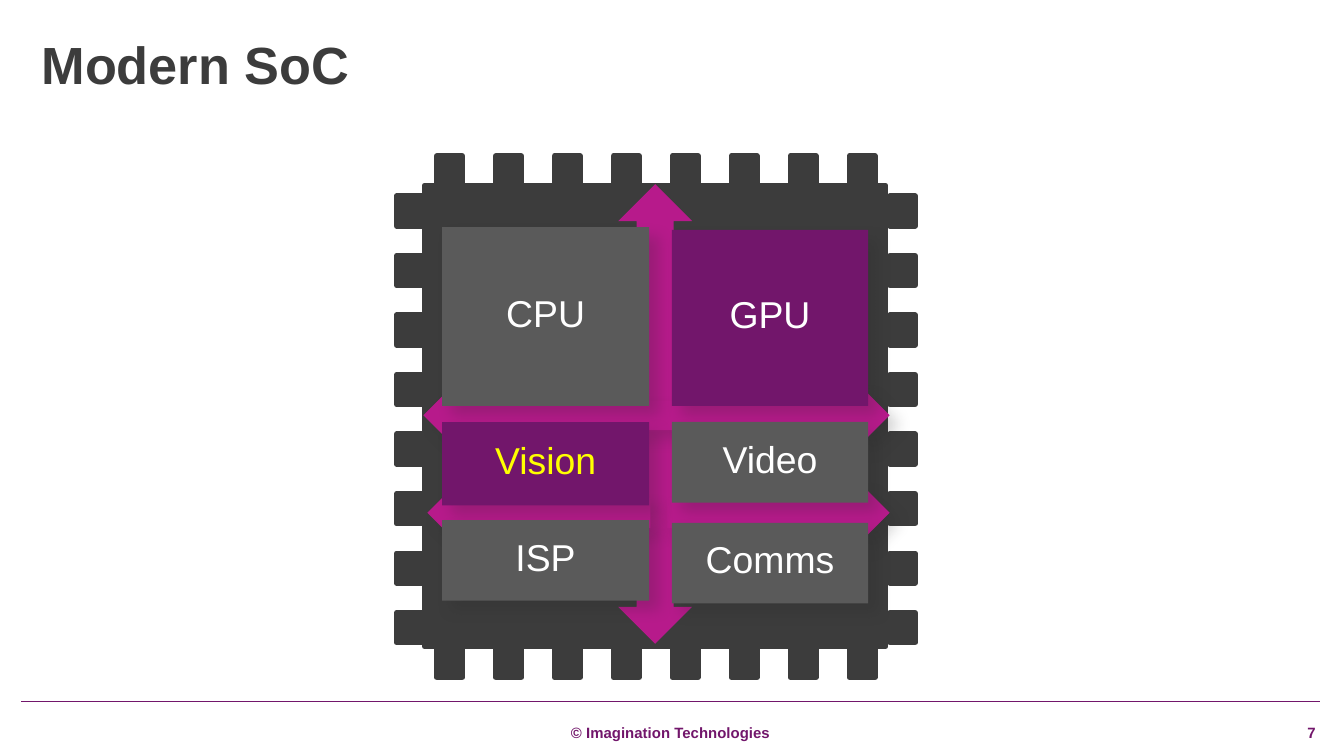
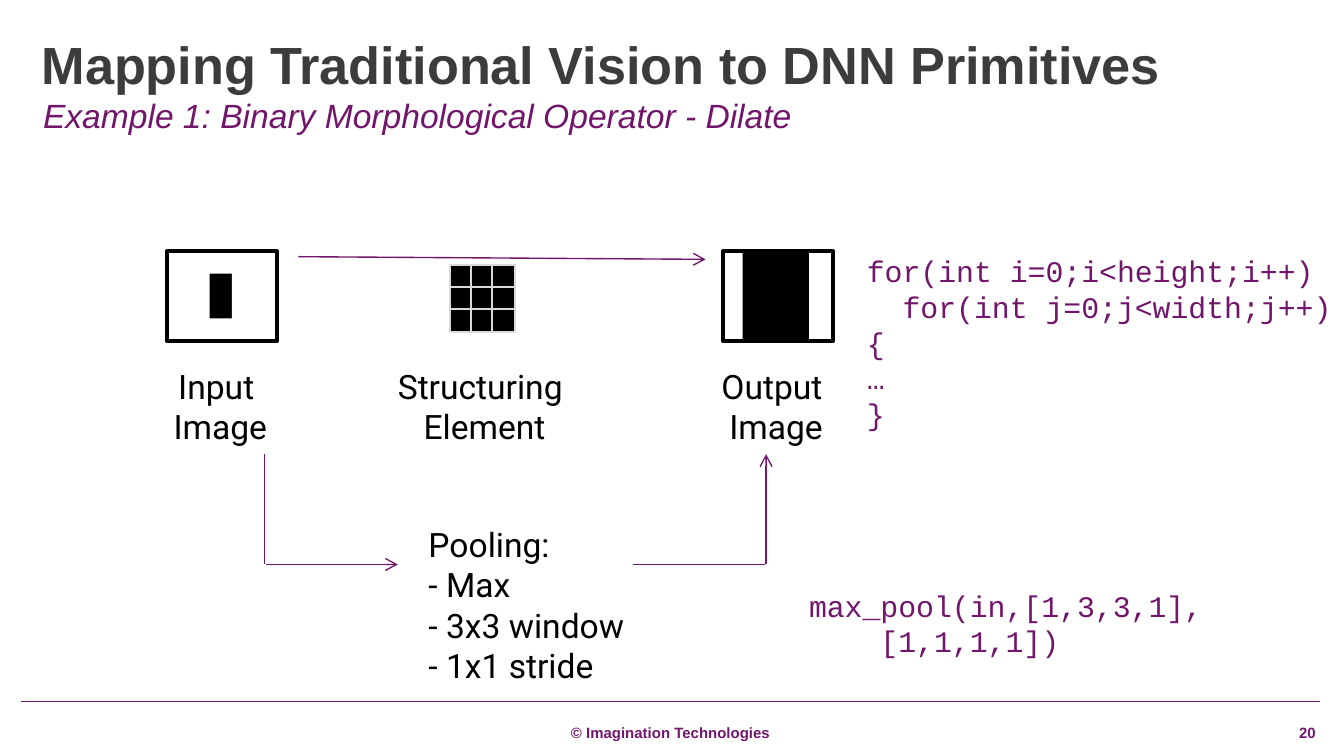
from dataclasses import dataclass
from typing import Optional

import pptx
import pptx.dml.color
import pptx.enum.dml
import pptx.enum.shapes
import pptx.enum.text
import pptx.oxml.ns
import pptx.presentation
import pptx.shapes.autoshape
import pptx.slide
import pptx.text.text
import pptx.util
from lxml import etree
from pptx.util import Inches

SHAPES = pptx.enum.shapes.MSO_SHAPE
ALIGN = pptx.enum.text.PP_ALIGN
ANCHOR = pptx.enum.text.MSO_ANCHOR
Box = tuple[float, float, float, float]
Point = tuple[float, float]


@dataclass(frozen=True)
class Theme:
    purple: str = "72166B"
    magenta: str = "B71A8B"
    dark: str = "3C3C3C"
    grey: str = "5A5A5A"
    pale: str = "D9D9D9"
    shadow: str = "262626"
    yellow: str = "FFFF00"
    white: str = "FFFFFF"
    black: str = "000000"
    title_size: int = 28
    block_size: int = 20
    label_size: int = 18
    code_size: int = 16
    footer_size: int = 8


THEME = Theme()


@dataclass(frozen=True)
class TextStyle:
    size: int
    color: str
    font: str = "Arial"
    bold: bool = False
    italic: bool = False


TITLE = TextStyle(THEME.title_size, THEME.dark, bold=True)
SUBTITLE = TextStyle(THEME.label_size, THEME.purple, italic=True)
FOOTER = TextStyle(THEME.footer_size, THEME.purple, bold=True)
LABEL = TextStyle(THEME.label_size, THEME.black, "Roboto")
CODE = TextStyle(THEME.code_size, THEME.purple, "Courier New")


@dataclass(frozen=True)
class Block:
    name: str
    box: Box
    fill: str = THEME.grey
    color: str = THEME.white


@dataclass(frozen=True)
class Arrow:
    kind: SHAPES
    box: Box
    shadow: bool = True


@dataclass(frozen=True)
class PixelGrid:
    """Rows of pixels between two corner pixels: '#' is black, '.' is white."""
    first: Point
    last: Point
    rows: tuple[str, ...]
    line: Optional[str] = None
    frame: Optional[Box] = None


@dataclass(frozen=True)
class Caption:
    box: Box
    paragraphs: tuple[str, ...]
    style: TextStyle = LABEL
    align: ALIGN = ALIGN.LEFT
    insets: Point = (0.1, 0.05)


@dataclass(frozen=True)
class Line:
    start: Point
    end: Point
    arrow: bool = False


# Slide 1: chip
PIN_COUNT = 8
PIN_SIZE = (0.19, 0.22)
CHIP_BODY = (3.16, 1.38, 3.43, 3.43)
BUSES = (
    Arrow(SHAPES.UP_DOWN_ARROW, (4.6, 1.37, 0.55, 3.42), shadow=False),
    Arrow(SHAPES.RIGHT_ARROW, (4.96, 3.59, 1.66, 0.45)),
    Arrow(SHAPES.LEFT_RIGHT_ARROW, (3.15, 2.87, 3.47, 0.44)),
    Arrow(SHAPES.LEFT_ARROW, (3.18, 3.59, 1.66, 0.45)),
)
BLOCKS = (
    Block("CPU", (3.29, 1.69, 1.54, 1.33)),
    Block("GPU", (5, 1.71, 1.46, 1.31), THEME.purple),
    Block("Video", (5, 3.14, 1.46, 0.6)),
    Block("Vision", (3.29, 3.14, 1.54, 0.62), THEME.purple, THEME.yellow),
    Block("Comms", (5, 3.89, 1.46, 0.6)),
    Block("ISP", (3.29, 3.87, 1.54, 0.6)),
)

# Slide 2: dilation as pooling
PIXEL = 0.17
GRIDS = (
    PixelGrid((1.23, 1.87), (1.89, 2.37), (".....", "..#..", "..#..", "....."),
              frame=(1.24, 1.87, 0.82, 0.67)),
    PixelGrid((3.35, 1.97), (3.66, 2.3), ("###",) * 3, line=THEME.pale),
    PixelGrid((5.36, 1.87), (6.02, 2.37), (".###.",) * 4, frame=(5.38, 1.87, 0.82, 0.67)),
)
CAPTIONS = (
    Caption((1.19, 2.67, 0.9, 0.71), ("Input ", "Image"), align=ALIGN.CENTER),
    Caption((2.86, 2.67, 1.49, 0.71), ("Structuring ", "Element"), align=ALIGN.CENTER),
    Caption((5.26, 2.67, 1.03, 0.71), ("Output ", "Image"), align=ALIGN.CENTER),
    Caption((3.09, 3.85, 1.67, 1.31), ("Pooling:\n- Max", "- 3x3 window\n- 1x1 stride")),
    Caption((6.36, 1.84, 3.68, 1.43),
            ("for(int i=0;i<height;i++)", "  for(int j=0;j<width;j++)", "{", "…", "}"),
            CODE, insets=(0.09, 0.04)),
    Caption((5.93, 4.33, 3.14, 0.62), ("max_pool(in,[1,3,3,1],", "    [1,1,1,1])"),
            CODE, insets=(0.09, 0.04)),
)
FLOW = (
    Line((2.22, 1.91), (5.25, 1.93), arrow=True),
    Line((1.97, 3.38), (1.97, 4.2)),
    Line((1.98, 4.2), (2.96, 4.2), arrow=True),
    Line((5.69, 4.2), (4.71, 4.2)),
    Line((5.7, 4.2), (5.7, 3.38), arrow=True),
)


def rgb(color: str) -> pptx.dml.color.RGBColor:
    return pptx.dml.color.RGBColor.from_string(color)


def add_element(parent: etree._Element, tag: str, **attributes: object) -> etree._Element:
    element = etree.SubElement(parent, pptx.oxml.ns.qn(tag))
    for key, value in attributes.items():
        element.set(key, str(value))
    return element


def add_run(paragraph: pptx.text.text._Paragraph, text: str, style: TextStyle) -> None:
    run = paragraph.add_run()
    run.text = text
    run.font.name = style.font
    run.font.size = pptx.util.Pt(style.size)
    run.font.bold = style.bold
    run.font.italic = style.italic
    run.font.color.rgb = rgb(style.color)


def add_text(slide: pptx.slide.Slide, box: Box, paragraphs: tuple[str, ...], style: TextStyle,
             align: ALIGN = ALIGN.LEFT, insets: Point = (0, 0), wrap: bool = False,
             spacing: Optional[float] = None) -> pptx.text.text.TextFrame:
    frame = slide.shapes.add_textbox(*map(Inches, box)).text_frame
    frame.word_wrap = wrap
    frame.margin_left = frame.margin_right = Inches(insets[0])
    frame.margin_top = frame.margin_bottom = Inches(insets[1])
    for number, text in enumerate(paragraphs):
        paragraph = frame.add_paragraph() if number else frame.paragraphs[0]
        paragraph.alignment = align
        paragraph.line_spacing = spacing
        for line_number, line in enumerate(text.split("\n")):
            if line_number:
                paragraph.add_line_break()
            add_run(paragraph, line, style)
    return frame


def add_shape(shapes, kind: SHAPES, box: Box, fill: Optional[str] = None,
              line: Optional[str] = None, width: float = 1,
              shadow: bool = False) -> pptx.shapes.autoshape.Shape:
    shape = shapes.add_shape(kind, *map(Inches, box))
    shape.shadow.inherit = False
    if fill:
        shape.fill.solid()
        shape.fill.fore_color.rgb = rgb(fill)
    else:
        shape.fill.background()
    if line:
        shape.line.color.rgb = rgb(line)
        shape.line.width = pptx.util.Pt(width)
    else:
        shape.line.fill.background()
    if shadow:
        effects = shape._element.spPr.find(pptx.oxml.ns.qn("a:effectLst"))
        outer = add_element(effects, "a:outerShdw", blurRad=pptx.util.Pt(8),
                            dist=pptx.util.Pt(7), dir=45 * 60000, algn="tl", rotWithShape=0)
        color = add_element(outer, "a:srgbClr", val=THEME.shadow)
        add_element(color, "a:alpha", val=20000)
    return shape


def add_line(slide: pptx.slide.Slide, line: Line, width: float = 0.75) -> None:
    connector = slide.shapes.add_connector(pptx.enum.shapes.MSO_CONNECTOR.STRAIGHT,
                                           *map(Inches, line.start + line.end))
    connector.line.color.rgb = rgb(THEME.purple)
    connector.line.width = pptx.util.Pt(width)
    if line.arrow:
        add_element(connector.line._get_or_add_ln(), "a:tailEnd", type="arrow")
    add_element(connector._element.spPr, "a:effectLst")


def add_base_slide(presentation: pptx.presentation.Presentation, title: str,
                   number: int) -> pptx.slide.Slide:
    """Add a slide with the shared footer, rule and title."""
    slide = presentation.slides.add_slide(presentation.slide_layouts[6])
    footer = add_text(slide, (0.18, 5.4, 9.64, 0.12),
                      (f"\t© Imagination Technologies\t\t{number}",), FOOTER,
                      wrap=True, spacing=0.9)
    tabs = add_element(footer.paragraphs[0]._p.get_or_add_pPr(), "a:tabLst")
    for position, alignment in ((4.81, "ctr"), (9.42, "r"), (9.61, "r")):
        add_element(tabs, "a:tab", pos=Inches(position), algn=alignment)
    add_line(slide, Line((0.16, 5.22), (9.82, 5.22)), 0.5)
    add_text(slide, (0.31, 0.31, 9.51, 0.35), (title,), TITLE, spacing=0.85)
    return slide


def spread(first: float, last: float, count: int) -> list[float]:
    return [first + (last - first) * index / (count - 1) for index in range(count)]


def build_chip_slide(presentation: pptx.presentation.Presentation) -> None:
    slide = add_base_slide(presentation, "Modern SoC", 7)

    # Chip body with pins on four sides
    chip = slide.shapes.add_group_shape()
    pins = [(left, top) for top in (1.16, 4.82) for left in spread(3.25, 6.32, PIN_COUNT)]
    pins += [(left, top) for left in (6.62, 2.95) for top in spread(1.46, 4.56, PIN_COUNT)]
    for box in [pin + PIN_SIZE for pin in pins] + [CHIP_BODY]:
        add_shape(chip.shapes, SHAPES.RECTANGLE, box, THEME.dark, THEME.dark, 3)

    # Buses and function blocks
    for bus in BUSES:
        add_shape(slide.shapes, bus.kind, bus.box, THEME.magenta, shadow=bus.shadow)
    for block in BLOCKS:
        shape = add_shape(slide.shapes, SHAPES.RECTANGLE, block.box, block.fill, shadow=True)
        frame = shape.text_frame
        frame.margin_left = frame.margin_right = frame.margin_top = frame.margin_bottom = 0
        frame.vertical_anchor = ANCHOR.MIDDLE
        paragraph = frame.paragraphs[0]
        paragraph.alignment = ALIGN.CENTER
        paragraph.line_spacing = 0.8
        add_run(paragraph, block.name, TextStyle(THEME.block_size, block.color))


def build_dilate_slide(presentation: pptx.presentation.Presentation) -> None:
    slide = add_base_slide(presentation, "Mapping Traditional Vision to DNN Primitives", 20)
    add_text(slide, (0.32, 0.71, 9.51, 0.24),
             ("Example 1: Binary Morphological Operator - Dilate",), SUBTITLE, wrap=True)

    # Pixel grids
    for grid in GRIDS:
        lefts = spread(grid.first[0], grid.last[0], len(grid.rows[0]))
        tops = spread(grid.first[1], grid.last[1], len(grid.rows))
        for top, pixels in zip(tops, grid.rows):
            for left, pixel in zip(lefts, pixels):
                fill = THEME.black if pixel == "#" else THEME.white
                add_shape(slide.shapes, SHAPES.RECTANGLE, (left, top, PIXEL, PIXEL),
                          fill, grid.line)
        if grid.frame:
            add_shape(slide.shapes, SHAPES.RECTANGLE, grid.frame, line=THEME.black, width=2)

    # Captions, code and flow
    for caption in CAPTIONS:
        add_text(slide, caption.box, caption.paragraphs, caption.style, caption.align,
                 caption.insets)
    for line in FLOW:
        add_line(slide, line)


def main() -> None:
    presentation = pptx.Presentation()
    presentation.slide_width = Inches(10)
    presentation.slide_height = Inches(10) * 9 // 16
    build_chip_slide(presentation)
    build_dilate_slide(presentation)
    presentation.save("out.pptx")


if __name__ == "__main__":
    main()
